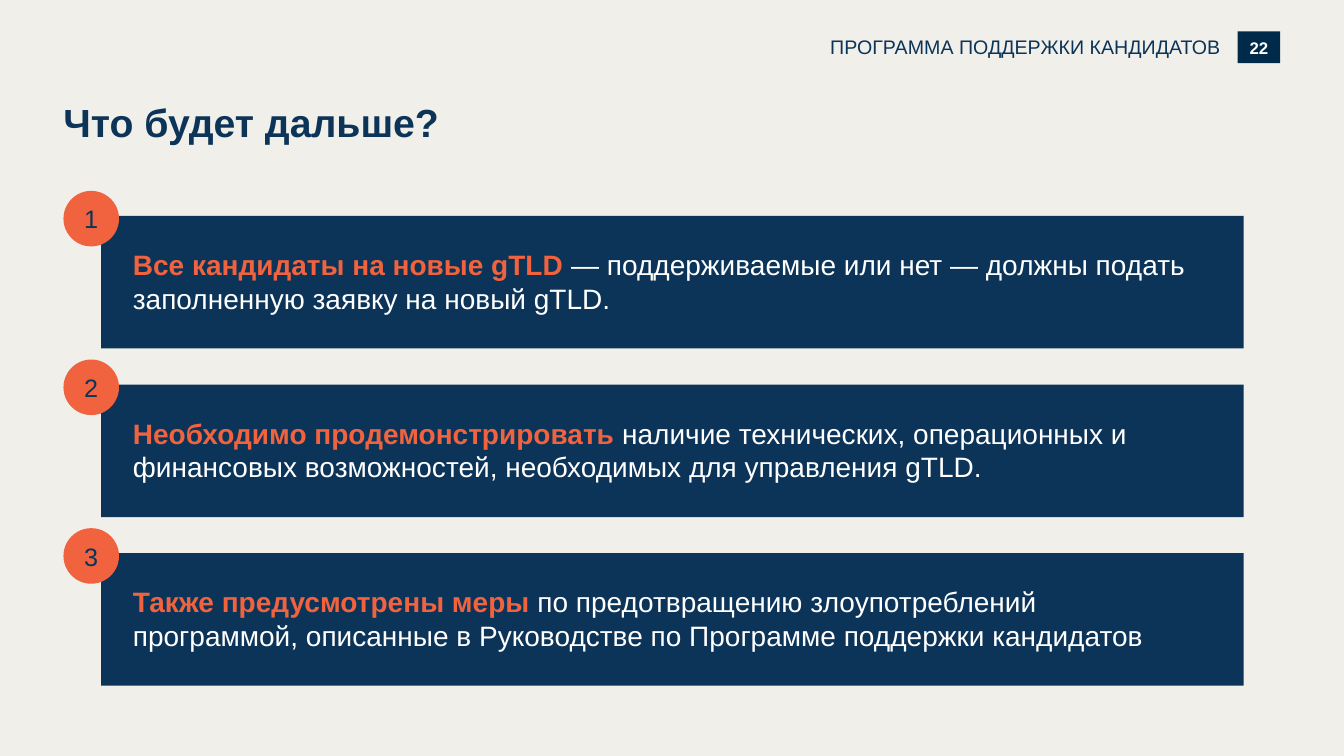
import pptx
import pptx.util
import pptx.dml.color
import pptx.enum.shapes
import pptx.enum.text
from pptx.util import Cm

NAVY = pptx.dml.color.RGBColor(0x0B, 0x34, 0x58)
DARK_NAVY = pptx.dml.color.RGBColor(0x00, 0x2A, 0x49)
ORANGE = pptx.dml.color.RGBColor(0xF1, 0x63, 0x3E)
CREAM = pptx.dml.color.RGBColor(0xF1, 0xEF, 0xEA)
WHITE = pptx.dml.color.RGBColor(0xFF, 0xFF, 0xFF)

ALIGN = pptx.enum.text.PP_ALIGN
ANCHOR = pptx.enum.text.MSO_ANCHOR
SHAPE = pptx.enum.shapes.MSO_SHAPE

STEPS = [
    ("Все кандидаты на новые gTLD ",
     "— поддерживаемые или нет — должны подать заполненную заявку на новый gTLD."),
    ("Необходимо продемонстрировать ",
     "наличие технических, операционных и финансовых возможностей, "
     "необходимых для управления gTLD."),
    ("Также предусмотрены меры ",
     "по предотвращению злоупотреблений программой, описанные в Руководстве "
     "по Программе поддержки кандидатов"),
]


def write_text(shape, runs, size, align=ALIGN.LEFT, anchor=ANCHOR.TOP,
               margins=(0, 0, 0, 0), line_spacing=None):
    frame = shape.text_frame
    frame.word_wrap = True
    frame.vertical_anchor = anchor
    (frame.margin_left, frame.margin_top,
     frame.margin_right, frame.margin_bottom) = [Cm(margin) for margin in margins]
    paragraph = frame.paragraphs[0]
    paragraph.alignment = align
    paragraph.line_spacing = line_spacing
    for text, color, bold in runs:
        run = paragraph.add_run()
        run.text = text
        run.font.name = "Arial"
        run.font.size = pptx.util.Pt(size)
        run.font.bold = bold
        run.font.color.rgb = color


def add_filled_shape(slide, kind, left, top, width, height, color):
    shape = slide.shapes.add_shape(kind, Cm(left), Cm(top), Cm(width), Cm(height))
    shape.shadow.inherit = False
    shape.fill.solid()
    shape.fill.fore_color.rgb = color
    shape.line.fill.background()
    return shape


def add_label(slide, left, top, width, height, text, size, **options):
    bold = options.pop("bold", False)
    label = slide.shapes.add_textbox(Cm(left), Cm(top), Cm(width), Cm(height))
    write_text(label, [(text, NAVY, bold)], size, **options)


def add_header(slide, left, top, width, height):
    badge_width = 1.07
    badge = add_filled_shape(slide, SHAPE.RECTANGLE, left + width - badge_width, top,
                             badge_width, height, DARK_NAVY)
    write_text(badge, [("22", WHITE, True)], 12, ALIGN.CENTER, ANCHOR.MIDDLE,
               line_spacing=1.08)
    add_label(slide, left, top + 0.1, width - badge_width - 0.43, 0.6,
              "ПРОГРАММА ПОДДЕРЖКИ КАНДИДАТОВ", 14, align=ALIGN.RIGHT)


def add_step(slide, left, top, width, height, number, lead, detail):
    indent, drop, diameter = 0.95, 0.63, 1.4
    panel = add_filled_shape(slide, SHAPE.RECTANGLE, left + indent, top + drop,
                             width - indent, height - drop, NAVY)
    write_text(panel, [(lead, ORANGE, True), (detail, WHITE, False)], 20,
               margins=(0.8, 0.8, 0.9, 0.8))
    circle = add_filled_shape(slide, SHAPE.OVAL, left, top, diameter, diameter, ORANGE)
    write_text(circle, [(str(number), NAVY, False)], 18, ALIGN.CENTER, ANCHOR.MIDDLE,
               margins=(0.25, 0.13, 0.25, 0.13))


def add_steps(slide, left, top, width, height, pitch):
    for index, (lead, detail) in enumerate(STEPS):
        add_step(slide, left, top + index * pitch, width, height, index + 1, lead, detail)


def main():
    presentation = pptx.Presentation()
    presentation.slide_width = Cm(33.87)
    presentation.slide_height = Cm(19.05)
    slide = presentation.slides.add_slide(presentation.slide_layouts[6])
    slide.background.fill.solid()
    slide.background.fill.fore_color.rgb = CREAM
    add_header(slide, 18.49, 0.79, 13.77, 0.8)
    add_label(slide, 1.6, 2.49, 19.91, 1.47, "Что будет дальше?", 28, bold=True)
    add_steps(slide, 1.6, 4.81, 29.74, 3.97, 4.25)
    presentation.save("out.pptx")


if __name__ == "__main__":
    main()
